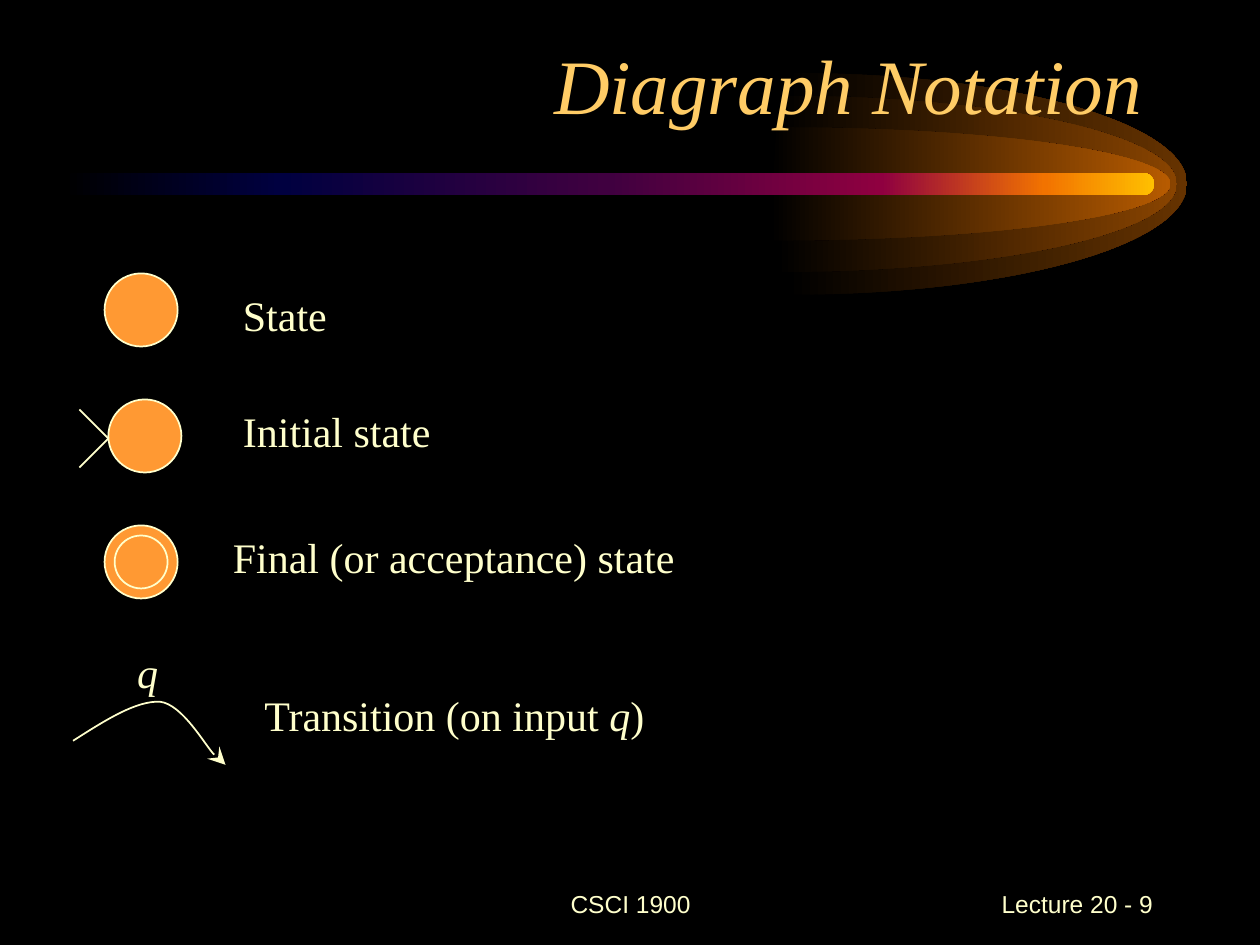
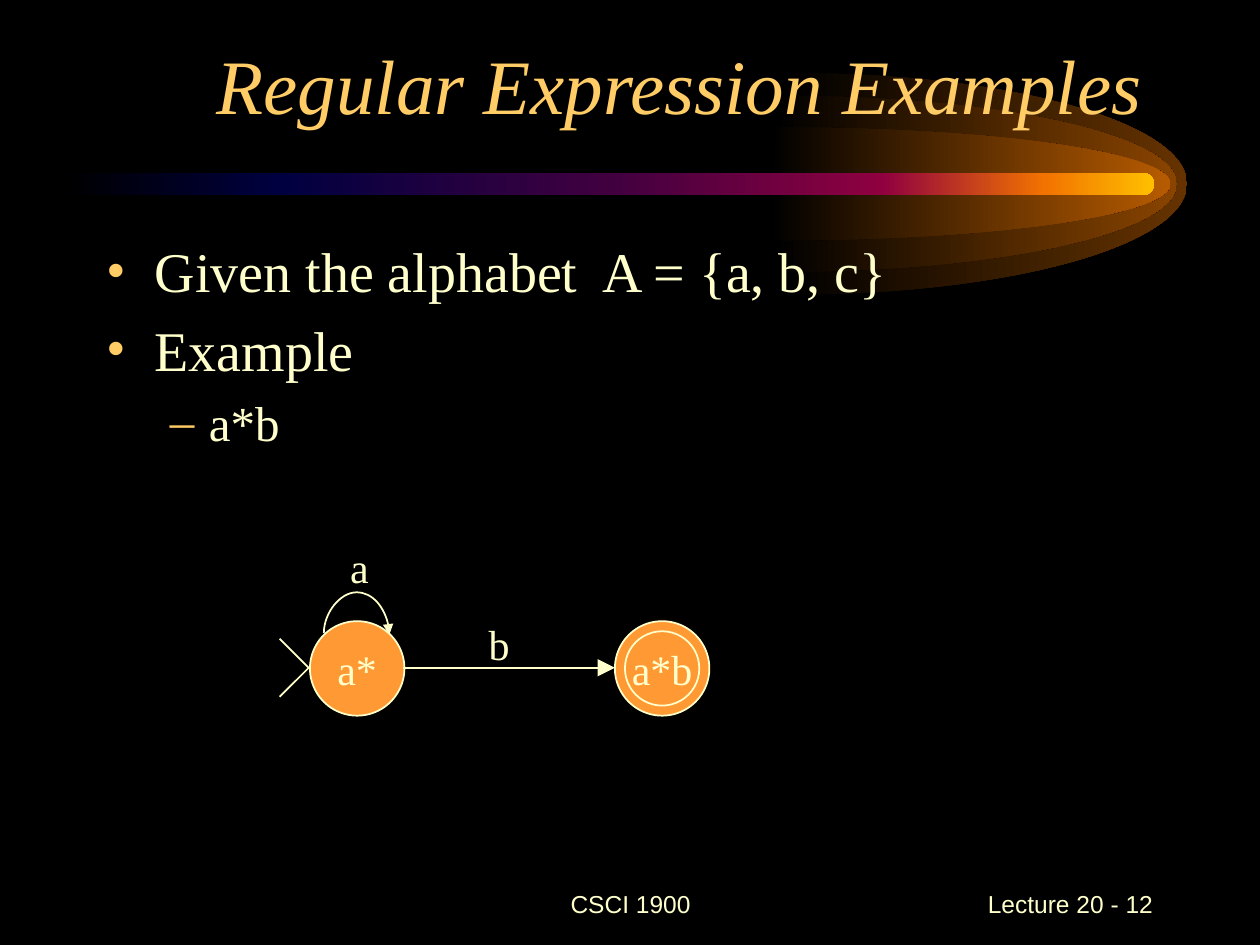
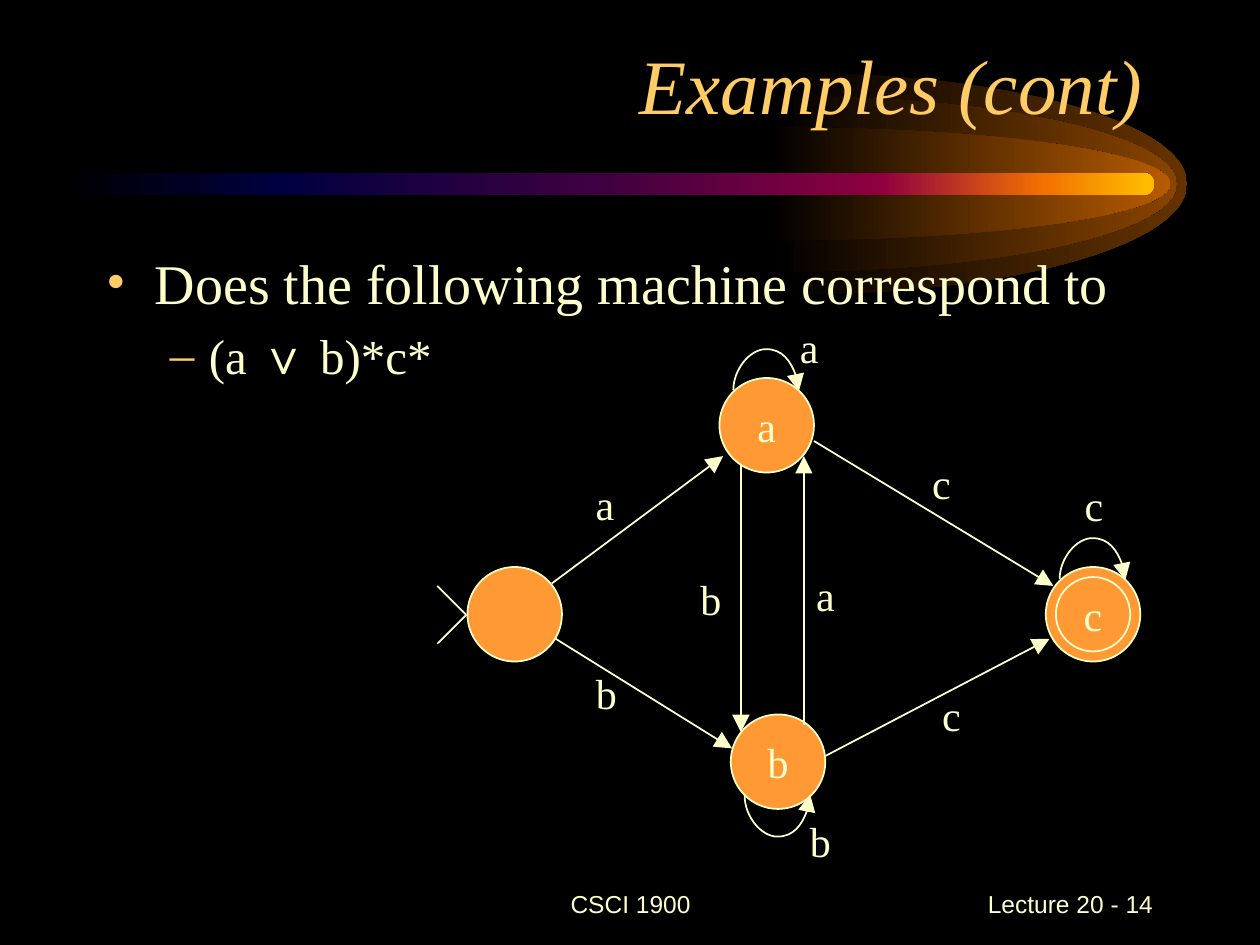
from dataclasses import dataclass

import pptx
import pptx.dml.color
import pptx.enum.shapes
import pptx.enum.text
import pptx.oxml.ns
import pptx.util
from lxml import etree

Inches = pptx.util.Inches
RGB = pptx.dml.color.RGBColor.from_string
qn = pptx.oxml.ns.qn
SHAPE = pptx.enum.shapes.MSO_SHAPE
CONNECTOR = pptx.enum.shapes.MSO_CONNECTOR
ALIGN = pptx.enum.text.PP_ALIGN
ANCHOR = pptx.enum.text.MSO_ANCHOR
AUTO_SIZE = pptx.enum.text.MSO_AUTO_SIZE


@dataclass(frozen=True)
class Theme:
    background: str = "000000"
    text: str = "FFFFCC"
    accent: str = "FFCC66"
    state: str = "FF9933"
    serif: str = "Times New Roman"
    sans: str = "Arial"
    title_size: int = 44
    body_sizes: tuple = (32, 28)
    label_size: int = 24
    footer_size: int = 14
    line_width: int = 1


theme = Theme()


def add_element(parent, tag, **attributes):
    return etree.SubElement(parent, qn(tag), attributes)


def write_paragraph(paragraph, text, size, font=theme.serif, color=theme.text,
                    align=ALIGN.LEFT, italic=False):
    paragraph.text = text
    paragraph.alignment = align
    paragraph.font.size = pptx.util.Pt(size)
    paragraph.font.name = font
    paragraph.font.color.rgb = RGB(color)
    paragraph.font.italic = italic


presentation = pptx.Presentation()
presentation.slide_width = Inches(10)
presentation.slide_height = Inches(7.5)
layout = presentation.slide_layouts[5]
layout.background.fill.solid()
layout.background.fill.fore_color.rgb = RGB(theme.background)
for placeholder in list(layout.placeholders):
    if placeholder.placeholder_format.idx:
        layout.shapes.element.remove(placeholder.element)

# Titles and footers
slides = []
for title_text, number in [("Diagraph Notation", 9),
                           ("Regular Expression Examples", 12),
                           ("Examples (cont)", 14)]:
    slide = presentation.slides.add_slide(layout)
    slides.append(slide)
    title = slide.shapes.title
    title.left, title.top, title.width, title.height = map(Inches, (0.67, 0.25, 8.5, 0.83))
    title.text_frame.vertical_anchor = ANCHOR.BOTTOM
    title.text_frame.auto_size = AUTO_SIZE.NONE
    write_paragraph(title.text_frame.paragraphs[0], title_text, theme.title_size,
                    color=theme.accent, align=ALIGN.RIGHT, italic=True)
    for left, width, text, align in [(3.42, 3.17, "CSCI 1900", ALIGN.CENTER),
                                     (7.17, 2.08, f"Lecture 20 - {number}", ALIGN.RIGHT)]:
        footer = slide.shapes.add_textbox(Inches(left), Inches(6.92), Inches(width), Inches(0.5))
        footer.text_frame.word_wrap = True
        footer.text_frame.vertical_anchor = ANCHOR.MIDDLE
        write_paragraph(footer.text_frame.paragraphs[0], text, theme.footer_size,
                        font=theme.sans, align=align)

notation, simple, machine = slides

# Curved outlines: a start, then three control points for each Bézier segment
outlines = []
for x, radius, glow in [(6.29, 0.88, "663300"), (6.21, 0.7, "894400"), (6.16, 0.45, "B75B00")]:
    top, bottom, bend = 1.46 - radius, 1.46 + radius, radius * 0.55
    outlines.append((glow, [(x, top), (x + 1.73, top), (x + 3.13, 1.46 - bend), (x + 3.13, 1.46),
                            (x + 3.13, 1.46 + bend), (x + 1.73, bottom), (x - 0.05, bottom)]))
outlines.append((None, [(0.58, 5.88), (0.83, 5.72), (1.08, 5.56), (1.27, 5.57),
                        (1.45, 5.59), (1.63, 5.92), (1.7, 5.99)]))
comet = []
for glow, points in outlines:
    points = [(Inches(x), Inches(y)) for x, y in points]
    builder = notation.shapes.build_freeform(*points[0])
    builder.add_line_segments(points[1:], close=bool(glow))
    shape = builder.convert_to_shape()
    shape.shadow.inherit = False
    segments = list(shape.element.spPr.iter(qn("a:lnTo")))
    for start in range(0, len(segments), 3):
        curve = etree.Element(qn("a:cubicBezTo"))
        segments[start].addprevious(curve)
        for segment in segments[start:start + 3]:
            curve.append(segment[0])
            segment.getparent().remove(segment)
    if glow:
        comet.append((shape, [(0, theme.background), (100, glow)]))
    else:
        shape.fill.background()
        shape.line.color.rgb = RGB(theme.text)
        shape.line.width = pptx.util.Pt(theme.line_width)

# Comet band: the half ellipses and a bar, moved to the layout
bar = notation.shapes.add_shape(SHAPE.ROUNDED_RECTANGLE, Inches(0.5), Inches(1.37),
                                Inches(8.66), Inches(0.18))
bar.shadow.inherit = False
bar.adjustments[0] = 0.5
comet.append((bar, [(0, theme.background), (20, "000040"), (50, "400040"),
                    (75, "8F0040"), (90, "F27300"), (100, "FFBF00")]))
for index, (shape, stops) in enumerate(comet):
    shape.line.fill.background()
    shape.fill.gradient()
    shape.fill.gradient_angle = 0
    stop_list = shape.element.spPr.find(".//" + qn("a:gsLst"))
    stop_list.clear()
    for position, color in stops:
        stop = add_element(stop_list, "a:gs", pos=str(position * 1000))
        add_element(stop, "a:srgbClr", val=color)
    shape.element.nvSpPr.cNvPr.set("id", str(20 + index))
    layout.shapes.element.insert(2 + index, shape.element)

# Bulleted text
for slide, top, height, bullets in [
    (simple, 1.83, 2.17, [(0, "Given the alphabet  A = {a, b, c}"), (0, "Example"), (1, "a*b")]),
    (machine, 1.92, 4.92, [(0, "Does the following machine correspond to"),
                           (1, "(a ∨ b)*c*")]),
]:
    body = slide.shapes.add_textbox(Inches(0.75), Inches(top), Inches(8.5), Inches(height))
    body.text_frame.word_wrap = True
    for index, (level, text) in enumerate(bullets):
        paragraph = body.text_frame.add_paragraph() if index else body.text_frame.paragraphs[0]
        paragraph.level = level
        properties = paragraph._p.get_or_add_pPr()
        properties.set("marL", str(Inches((0.38, 0.81)[level])))
        properties.set("indent", str(Inches((-0.38, -0.31)[level])))
        add_element(add_element(properties, "a:spcBef"), "a:spcPct", val="20000")
        add_element(add_element(properties, "a:buClr"), "a:srgbClr", val=theme.accent)
        add_element(properties, "a:buFont", typeface=theme.serif)
        add_element(properties, "a:buChar", char="•–"[level])
        write_paragraph(paragraph, text, theme.body_sizes[level])

# States: slide, left, top, diameter, label, final, side of the loop
connectors = []
for slide, left, top, diameter, label, final, loop in [
    (notation, 0.83, 2.17, 0.58, "", False, None),
    (notation, 0.86, 3.17, 0.58, "", False, None),
    (notation, 0.83, 4.17, 0.58, "", True, None),
    (simple, 2.46, 4.93, 0.75, "a*", False, "above"),
    (simple, 4.88, 4.93, 0.75, "a*b", True, None),
    (machine, 3.71, 4.5, 0.75, "", False, None),
    (machine, 5.71, 3, 0.75, "a", False, "above"),
    (machine, 5.8, 5.67, 0.75, "b", False, "below"),
    (machine, 8.3, 4.5, 0.75, "c", True, "above"),
]:
    for inset in (0, 0.08) if final else (0,):
        side = Inches(diameter - 2 * inset)
        circle = slide.shapes.add_shape(SHAPE.OVAL, Inches(left + inset), Inches(top + inset),
                                        side, side)
        circle.shadow.inherit = False
        if inset:
            circle.fill.background()
        else:
            circle.fill.solid()
            circle.fill.fore_color.rgb = RGB(theme.state)
        circle.line.color.rgb = RGB(theme.text)
        circle.line.width = pptx.util.Pt(theme.line_width)
    if label:
        circle.text_frame.word_wrap = False
        circle.text_frame.vertical_anchor = ANCHOR.MIDDLE
        write_paragraph(circle.text_frame.paragraphs[0], label, theme.label_size,
                        align=ALIGN.CENTER)
    if loop:
        # A thin upright curve, turned so that it bulges away from the state
        center_x = left + diameter / 2 - 0.01
        center_y = top + (0.1 if loop == "above" else 0.64)
        reach = 0.26 if loop == "above" else -0.26
        curve = slide.shapes.add_connector(
            CONNECTOR.CURVE, Inches(center_x), Inches(center_y + reach),
            Inches(center_x + 0.01), Inches(center_y - reach))
        properties = curve.element.spPr
        quarter_turns = 1 if loop == "above" else 3
        properties.find(qn("a:xfrm")).set("rot", str(quarter_turns * 5400000))
        guides = properties.find(qn("a:prstGeom")).find(qn("a:avLst"))
        add_element(guides, "a:gd", name="adj1", fmla="val -3300000")
        connectors.append((curve, "triangle", "med" if slide is simple else "lg"))

# Initial-state marks, given by their tip
for slide, x, y in [(notation, 0.86, 3.48), (simple, 2.45, 5.3), (machine, 3.7, 4.88)]:
    for offset in (-0.23, 0.23):
        stroke = slide.shapes.add_connector(CONNECTOR.STRAIGHT, Inches(x - 0.23),
                                            Inches(y + offset), Inches(x), Inches(y))
        connectors.append((stroke, None, None))

# Transition arrows
for slide, head, *ends in [
    (notation, "stealth", 1.72, 6, 1.79, 6.07),
    (simple, "triangle", 3.2, 5.3, 4.88, 5.3),
    (machine, "triangle", 4.38, 4.63, 5.74, 3.62),
    (machine, "triangle", 4.41, 5.07, 5.81, 5.94),
    (machine, "triangle", 5.88, 3.68, 5.88, 5.81),
    (machine, "triangle", 6.38, 5.75, 6.38, 3.62),
    (machine, "triangle", 6.46, 3.5, 8.36, 4.65),
    (machine, "triangle", 6.55, 6, 8.33, 5.07),
]:
    arrow = slide.shapes.add_connector(CONNECTOR.STRAIGHT, *map(Inches, ends))
    connectors.append((arrow, head, "lg"))

for connector, head, size in connectors:
    connector.line.color.rgb = RGB(theme.text)
    connector.line.width = pptx.util.Pt(theme.line_width)
    properties = connector.element.spPr
    if head:
        add_element(properties.find(qn("a:ln")), "a:tailEnd", type=head, w=size, len=size)
    add_element(properties, "a:effectLst")

# Labels; each entry lists its runs, and "q" is set in italics
for slide, left, top, width, *runs in [
    (notation, 0.99, 5.08, 0.42, "q"),
    (notation, 1.83, 2.25, 5.5, "State"),
    (notation, 1.83, 3.17, 5.5, "Initial state"),
    (notation, 1.75, 4.17, 5.5, "Final (or acceptance) state"),
    (notation, 2, 5.42, 5.5, "Transition (on input ", "q", ")"),
    (simple, 2.68, 4.25, 0.33, "a"),
    (simple, 3.78, 4.86, 0.42, "b"),
    (machine, 6.33, 6.42, 0.42, "b"),
    (machine, 6.25, 2.5, 0.33, "a"),
    (machine, 4.63, 3.75, 0.33, "a"),
    (machine, 4.63, 5.25, 0.42, "b"),
    (machine, 5.46, 4.5, 0.42, "b"),
    (machine, 6.38, 4.47, 0.33, "a"),
    (machine, 7.3, 3.58, 0.33, "c"),
    (machine, 7.38, 5.42, 0.33, "c"),
    (machine, 8.51, 3.76, 0.33, "c"),
]:
    label = slide.shapes.add_textbox(Inches(left), Inches(top), Inches(width), Inches(0.5))
    label.text_frame.word_wrap = True
    label.text_frame.auto_size = AUTO_SIZE.SHAPE_TO_FIT_TEXT
    paragraph = label.text_frame.paragraphs[0]
    properties = paragraph._p.get_or_add_pPr()
    add_element(add_element(properties, "a:spcBef"), "a:spcPct", val="50000")
    write_paragraph(paragraph, "", theme.label_size)
    for text in runs:
        run = paragraph.add_run()
        run.text = text
        run.font.italic = text == "q"

presentation.save("out.pptx")
